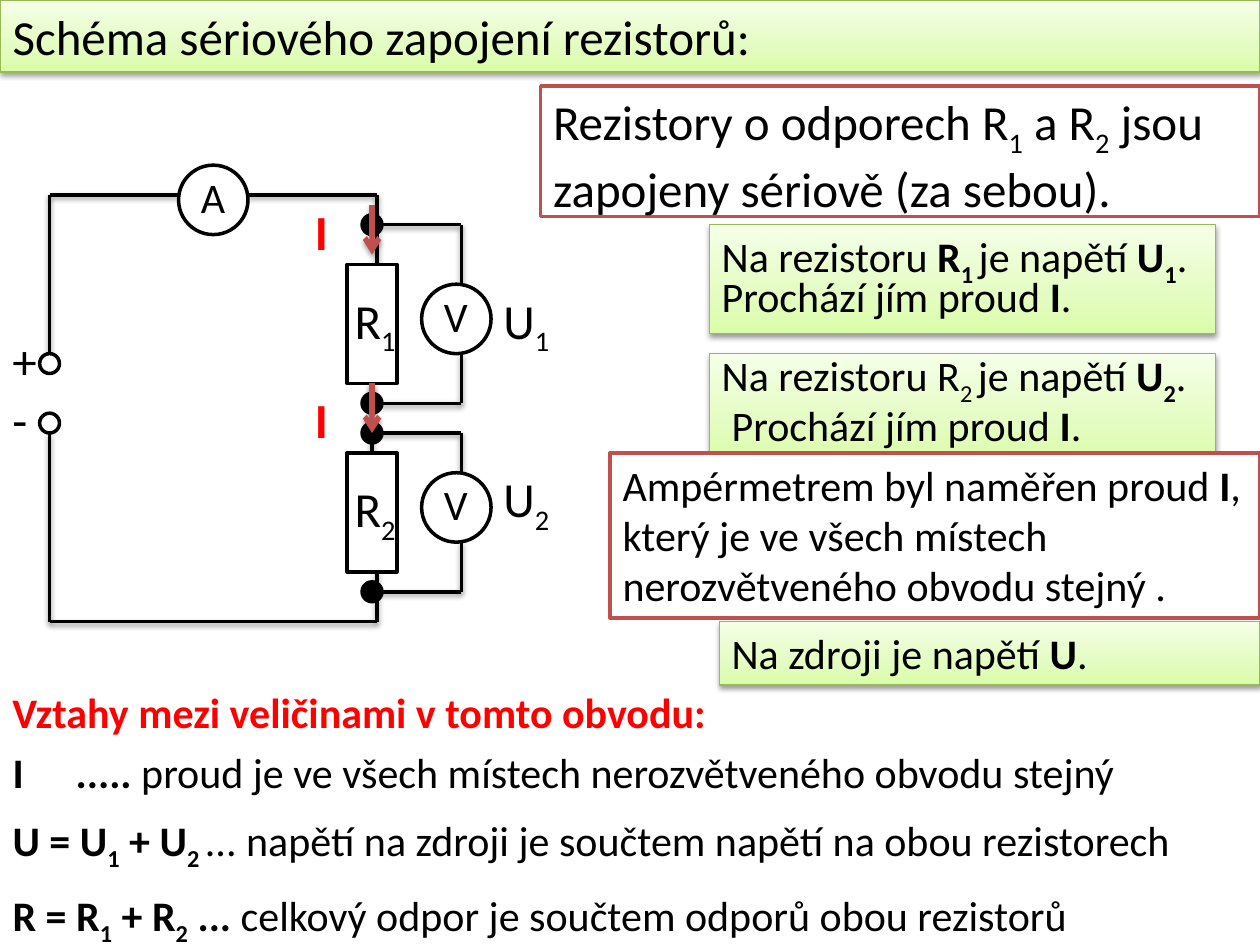
"""Build a slide on resistors connected in series, with circuit diagram and formulas."""
from copy import deepcopy
from dataclasses import dataclass

from lxml.etree import SubElement
from pptx import Presentation
from pptx.dml.color import RGBColor
from pptx.enum.shapes import MSO_CONNECTOR, MSO_SHAPE
from pptx.enum.text import MSO_ANCHOR, MSO_AUTO_SIZE, PP_ALIGN
from pptx.oxml.ns import qn
from pptx.util import Cm, Pt


@dataclass(frozen=True)
class Theme:
    font: str = "Calibri"
    black: str = "000000"
    white: str = "FFFFFF"
    red: str = "FF0000"
    accent: str = "C0504D"
    green_line: str = "98B955"
    green_stops: tuple = ((0, "DAFDA7"), (0.35, "E4FCC2"), (1, "F5FFE7"))
    large: int = 28
    medium: int = 24


theme = Theme()


def write(shape, paragraphs, size, color=theme.black):
    """Write paragraphs of (text, style) runs, where b is bold and s is subscript."""
    frame = shape.text_frame
    frame_format = {"word_wrap": True, "auto_size": MSO_AUTO_SIZE.NONE,
                    "vertical_anchor": MSO_ANCHOR.TOP}
    for name, value in frame_format.items():
        setattr(frame, name, value)
    for index, runs in enumerate(paragraphs):
        paragraph = frame.add_paragraph() if index else frame.paragraphs[0]
        paragraph.alignment = PP_ALIGN.LEFT
        for text, style in runs:
            run = paragraph.add_run()
            run.text = text
            run_format = {"name": theme.font, "size": Pt(size), "bold": "b" in style}
            for name, value in run_format.items():
                setattr(run.font, name, value)
            run.font.color.rgb = RGBColor.from_string(color)
            if "s" in style:
                run._r.get_or_add_rPr().set("baseline", "-25000")


def decorate(shape, line_color, width, fill=None, shadow=False):
    """Set line, solid or green gradient fill, and shadow of a shape or connector."""
    shape.line.color.rgb = RGBColor.from_string(line_color)
    shape.line.width = Pt(width)
    if fill == "gradient":
        shape.fill.gradient()
        shape.fill.gradient_angle = 90
        stop_list = shape._element.spPr.find(qn("a:gradFill")).find(qn("a:gsLst"))
        stop_list.insert(1, deepcopy(stop_list[0]))
        for stop, (position, color) in zip(shape.fill.gradient_stops, theme.green_stops):
            stop.position = position
            stop.color.rgb = RGBColor.from_string(color)
    elif fill:
        shape.fill.solid()
        shape.fill.fore_color.rgb = RGBColor.from_string(fill)
    effects = SubElement(shape._element.spPr, qn("a:effectLst"))
    if shadow:
        outer = SubElement(effects, qn("a:outerShdw"), blurRad=str(Pt(3.1)),
                           dist=str(Pt(1.6)), dir="5400000", rotWithShape="0")
        shadow_color = SubElement(outer, qn("a:srgbClr"), val=theme.black)
        SubElement(shadow_color, qn("a:alpha"), val="38000")


presentation = Presentation()
presentation.slide_width, presentation.slide_height = Cm(25.4), Cm(19.05)
slide = presentation.slides.add_slide(presentation.slide_layouts[1])
shapes = slide.shapes

title, relations = shapes.title, slide.placeholders[1]
for placeholder, bounds in ((title, (0, 0, 25.4, 1.45)), (relations, (0, 14.93, 25.4, 4.12))):
    for name, value in zip(("left", "top", "width", "height"), bounds):
        setattr(placeholder, name, Cm(value))
decorate(title, theme.green_line, 0.75, "gradient", True)
write(title, [[("Schéma sériového zapojení rezistorů:", "")]], theme.large)

write(relations, [
    [("I\t.....", "b"), (" proud je ve všech místech nerozvětveného obvodu stejný", "")],
    [("U = U", "b"), ("1", "bs"), (" + U", "b"), ("2 ", "bs"),
     ("... napětí na zdroji je součtem napětí na obou rezistorech", "")],
    [("R = R", "b"), ("1", "bs"), (" + R", "b"), ("2", "bs"), (" ... ", "b"),
     ("celkový odpor je součtem odporů obou rezistorů", "")],
], theme.medium)
for paragraph in relations.text_frame.paragraphs:
    spacing = {"space_before": Pt(0), "space_after": Pt(10), "line_spacing": 1.0}
    for name, value in spacing.items():
        setattr(paragraph, name, value)
    properties = paragraph._p.get_or_add_pPr()
    properties.set("marL", "0")
    properties.set("indent", "0")
    SubElement(properties, qn("a:buNone"))
    tabs = SubElement(properties, qn("a:tabLst"))
    SubElement(tabs, qn("a:tab"), pos=str(Cm(0.76)), algn="l")

for top in (4.53, 6.93 + 0.2):
    panel = shapes.add_shape(MSO_SHAPE.RECTANGLE, Cm(14.3), Cm(top), Cm(10.2), Cm(2.2))
    decorate(panel, theme.green_line, 0.75, "gradient", True)

wires = [
    (1, 7.13, 1, 3.93), (1, 3.93, 3.6, 3.93), (5, 3.93, 7.6, 3.93), (7.6, 3.93, 7.6, 5.33),
    (7.5, 7.73, 7.5, 9.13), (7.6, 11.53, 7.6, 12.53), (7.6, 12.53, 1, 12.53),
    (1, 12.53, 1, 8.73),
    (7.5, 4.53, 9.3, 4.53), (9.3, 4.53, 9.3, 5.73), (9.3, 7.13, 9.3, 8.13),
    (9.3, 8.13, 7.5, 8.13),
    (7.5, 8.73, 9.3, 8.73), (9.3, 8.73, 9.3, 9.53), (9.3, 10.93, 9.3, 11.93),
    (9.3, 11.93, 7.5, 11.93),
]
for wire in wires:
    connector = shapes.add_connector(MSO_CONNECTOR.STRAIGHT, *map(Cm, wire))
    decorate(connector, theme.black, 2, shadow=True)

meters = [(3.6, 3.33), (8.5, 5.73), (8.5, 9.53)]
terminals = [(0.8, 7.13), (0.8, 8.33)]
nodes = [(7.3, top) for top in (4.33, 7.93, 8.53, 11.73)]
resistors = [(7, 5.33), (7, 9.13)]
components = [
    (MSO_SHAPE.OVAL, meters, 1.4, 1.4, theme.white),
    (MSO_SHAPE.RECTANGLE, resistors, 1, 2.4, theme.white),
    (MSO_SHAPE.OVAL, terminals, 0.4, 0.4, theme.white),
    (MSO_SHAPE.OVAL, nodes, 0.4, 0.4, theme.black),
]
for kind, positions, width, height, fill in components:
    for left, top in positions:
        component = shapes.add_shape(kind, Cm(left), Cm(top), Cm(width), Cm(height))
        decorate(component, theme.black, 2, fill)

for top in (4.13, 7.73):
    arrow = shapes.add_connector(MSO_CONNECTOR.STRAIGHT, Cm(7.5), Cm(top), Cm(7.5), Cm(top + 1))
    decorate(arrow, theme.accent, 3, shadow=True)
    SubElement(arrow.line._get_or_add_ln(), qn("a:tailEnd"), type="arrow")

framed_texts = [
    (10.9, 1.73, 14.5, 2.64, theme.large, False,
     [("Rezistory o odporech R", ""), ("1", "s"), (" a R", ""), ("2", "s"),
      (" jsou zapojeny sériově (za sebou).", "")]),
    (12.3, 9.13, 13.1, 3.33, theme.medium, False,
     [("Ampérmetrem byl naměřen proud ", ""), ("I", "b"),
      (", který je ve všech místech nerozvětveného obvodu stejný .", "")]),
    (14.5, 12.53, 10.9, 1.28, theme.medium, True,
     [("Na zdroji je napětí ", ""), ("U", "b"), (".", "")]),
]
for left, top, width, height, size, green, runs in framed_texts:
    frame = shapes.add_shape(MSO_SHAPE.RECTANGLE, Cm(left), Cm(top), Cm(width), Cm(height))
    if green:
        decorate(frame, theme.green_line, 0.75, "gradient", True)
    else:
        decorate(frame, theme.accent, 2, theme.white)
    write(frame, [runs], size)

current = [("Prochází jím proud ", ""), ("I", "b"), (".", "")]
labels = [
    (3.8, 3.33, 1.2, theme.medium, theme.black, [("A", "")]),
    (8.7, 5.73, 1.2, theme.medium, theme.black, [("V", "")]),
    (8.7, 9.53, 1.2, theme.medium, theme.black, [("V", "")]),
    (0, 6.53, 0.8, theme.large, theme.black, [("+", "")]),
    (0, 7.73, 0.8, theme.large, theme.black, [("-", "")]),
    (6.9, 5.73, 1.4, theme.large, theme.black, [("R", ""), ("1", "s")]),
    (6.9, 9.53, 1.4, theme.large, theme.black, [("R", ""), ("2", "s")]),
    (9.9, 5.73, 1.6, theme.large, theme.black, [("U", ""), ("1", "s")]),
    (9.9, 9.33, 1.6, theme.large, theme.black, [("U", ""), ("2", "s")]),
    (6.1, 3.93, 1.6, theme.large, theme.red, [("I", "b")]),
    (6.1, 7.73, 1.6, theme.large, theme.red, [("I", "b")]),
    (14.3, 4.53, 11.1, theme.medium, theme.black,
     [("Na rezistoru ", ""), ("R", "b"), ("1 ", "bs"), ("je napětí ", ""), ("U", "b"),
      ("1", "bs"), (".", "")]),
    (14.3, 5.33, 10.1, theme.medium, theme.black, current),
    (14.3, 6.93, 11.1, theme.medium, theme.black,
     [("Na rezistoru R", ""), ("2 ", "s"), ("je napětí ", ""), ("U", "b"), ("2", "bs"),
      (".", "")]),
    (14.5, 7.93, 10.1, theme.medium, theme.black, current),
    (0, 13.72, 15.1, theme.medium, theme.red,
     [("Vztahy mezi veličinami v tomto obvodu:", "b")]),
]
for left, top, width, size, color, runs in labels:
    height = 1.45 if size == theme.large else 1.28
    label = shapes.add_textbox(Cm(left), Cm(top), Cm(width), Cm(height))
    write(label, [runs], size, color)

presentation.save("out.pptx")
